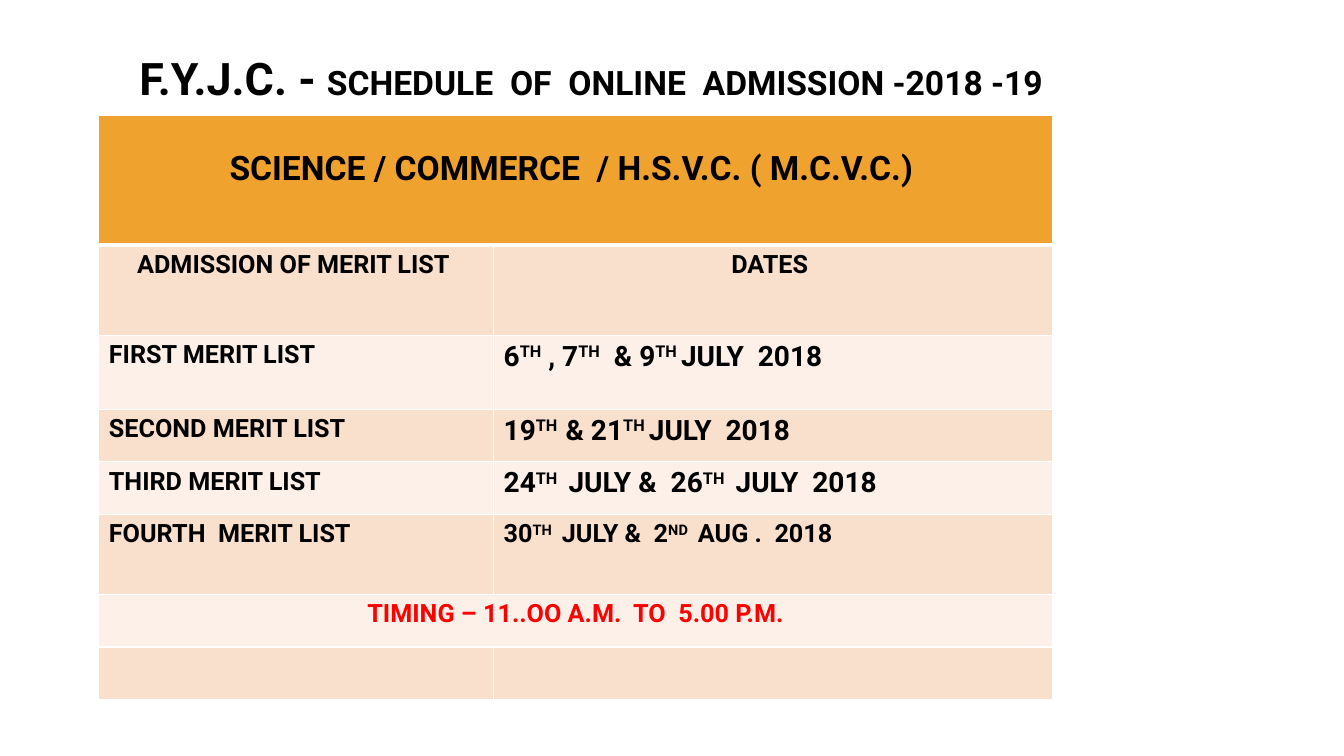
from pptx import Presentation
from pptx import util as u
from pptx.dml.color import RGBColor
from pptx.enum import text
from pptx.oxml import parse_xml
from pptx.oxml.ns import nsdecls

Pt = u.Pt
HUES = {"ink": "000000", "alert": "FF0000", "rule": "FFFFFF",
        "head": "F0A22E", "dark": "F9E0CD", "light": "FCF0E8"}
COLS = [282, 399]
ROWS = [92.8, 64.4, 53, 37.6, 37.6, 57.2, 37.5, 37.5]
LISTS = [
    ("FIRST MERIT LIST", "6^TH^ , 7^TH^  & 9^TH ^JULY  2018", 20),
    ("SECOND MERIT LIST", "19^TH  ^& 21^TH ^JULY  2018", 20),
    ("THIRD MERIT LIST", "24^TH ^ JULY &  26^TH ^ JULY  2018", 20),
    ("FOURTH  MERIT LIST", "30^TH ^ JULY &  2^ND ^ AUG .  2018", 18),
]


class Deck:
    """Holds the slide, its font and its colours, and draws each kind of element."""

    def __init__(self, font, hues):
        self.font, self.hues = font, hues
        self.prs = Presentation()
        self.prs.slide_width, self.prs.slide_height = Pt(960), Pt(540)
        self.slide = self.prs.slides.add_slide(self.prs.slide_layouts[5])

    def runs(self, para, words, size, hue="ink"):
        for n, part in enumerate(words.split("^")):
            run = para.add_run()
            run.text = part
            font = run.font
            font.name, font.size, font.bold = self.font, Pt(size), True
            font.color.rgb = RGBColor.from_string(self.hues[hue])
            if n % 2:
                run._r.get_or_add_rPr().set("baseline", "30000")

    def title(self, box, inset, parts):
        shape = self.slide.shapes.title
        shape.left, shape.top, shape.width, shape.height = map(Pt, box)
        frame = shape.text_frame
        frame.word_wrap = True
        frame.auto_size = text.MSO_AUTO_SIZE.NONE
        frame.vertical_anchor = text.MSO_ANCHOR.TOP
        frame.margin_left = Pt(inset)
        para = frame.paragraphs[0]
        para.alignment = text.PP_ALIGN.LEFT
        for words, size in parts:
            self.runs(para, words, size)

    def table(self, left, top, cols, rows):
        grid = self.slide.shapes.add_table(
            len(rows), len(cols), Pt(left), Pt(top), Pt(sum(cols)), Pt(sum(rows))).table
        grid.first_row = grid.horz_banding = False
        for col, width in zip(grid.columns, cols):
            col.width = Pt(width)
        for row, height in zip(grid.rows, rows):
            row.height = Pt(height)
        return grid

    def cell(self, cell, fill, top=1, base=1):
        props = cell._tc.get_or_add_tcPr()
        for side, width in zip("LRTB", (1, 1, top, base)):
            props.append(parse_xml(
                f'<a:ln{side} {nsdecls("a")} w="{Pt(width)}"><a:solidFill>'
                f'<a:srgbClr val="{self.hues["rule"]}"/></a:solidFill></a:ln{side}>'))
        cell.fill.solid()
        cell.fill.fore_color.rgb = RGBColor.from_string(self.hues[fill])

    def label(self, cell, words, size=18, hue="ink", mid=False):
        para = cell.text_frame.paragraphs[0]
        para.alignment = text.PP_ALIGN.CENTER if mid else text.PP_ALIGN.LEFT
        self.runs(para, words, size, hue)


def main():
    deck = Deck("Roboto", HUES)
    deck.title((28, 32.4, 845, 201), 71.5, [
        ("F.Y.J.C. - ", 32), ("SCHEDULE  OF  ONLINE  ADMISSION -2018 -19", 24)])
    grid = deck.table(70.6, 82.2, COLS, ROWS)
    for r in range(len(ROWS)):
        fill = "head" if r == 0 else "dark" if r % 2 else "light"
        for c in range(len(COLS)):
            deck.cell(grid.cell(r, c), fill, 3 if r == 1 else 1, 3 if r == 0 else 1)
    for r in (0, 6):
        grid.cell(r, 0).merge(grid.cell(r, 1))
    head = grid.cell(0, 0)
    head.margin_top = Pt(24.7)
    deck.label(head, "SCIENCE / COMMERCE  / H.S.V.C. ( M.C.V.C.) ", 24, mid=True)
    for c, words in enumerate(("ADMISSION OF MERIT LIST ", "DATES ")):
        deck.label(grid.cell(1, c), words, mid=True)
    for r, (name, dates, size) in enumerate(LISTS, 2):
        deck.label(grid.cell(r, 0), name)
        deck.label(grid.cell(r, 1), dates, size)
    deck.label(grid.cell(6, 0), "TIMING – 11..OO A.M.  TO  5.00 P.M.", hue="alert", mid=True)
    deck.prs.save("out.pptx")


if __name__ == "__main__":
    main()
